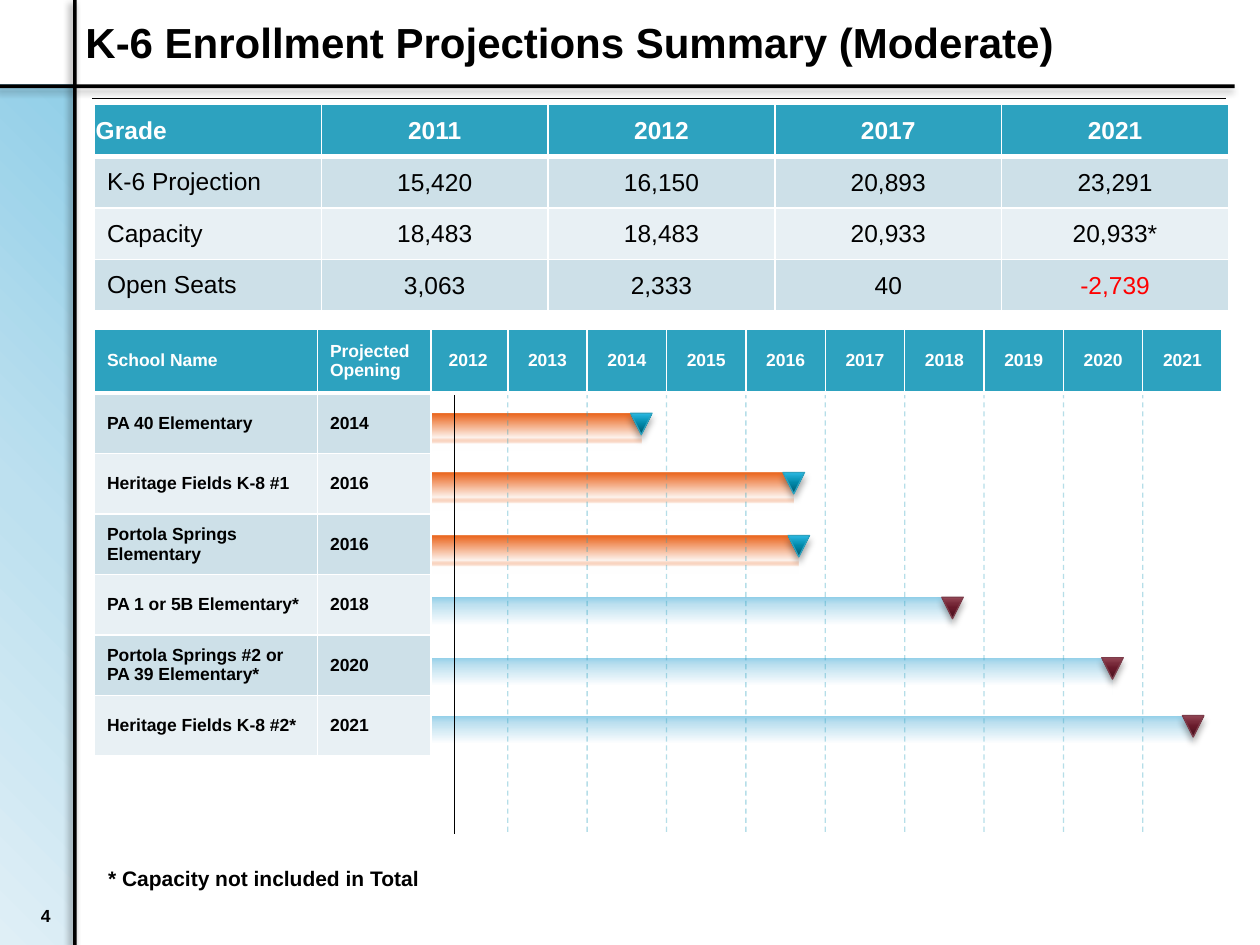
from lxml import etree
from pptx import Presentation
from pptx.dml.color import RGBColor
from pptx.enum import dml, shapes, text
from pptx.oxml import ns
from pptx.util import Inches, Pt

COLORS = {
    "black": "000000", "white": "FFFFFF", "red": "FF0000", "teal": "2DA2BF",
    "band_dark": "CDE0E8", "band_light": "E8F0F4", "maroon": "7D3C4A",
}
# Gradient stops: position, colour and optional opacity, all in percent
GRADIENTS = {
    "side": [(0, "92CFE8"), (50, "BDE0EF"), (100, "DFEFF6")],
    "orange": [(0, "EB641B"), (65, "EB641B", 7), (81, "FFFFFF"), (100, "FFFFFF")],
    "blue": [(0, "92CFE8"), (20, "BDE0EF"), (75, "FFFFFF")],
    "teal": [(0, "005367"), (50, "0086A7"), (70, "0E9ABE"), (100, "2CB9E3")],
    "maroon": [(0, "420F1A"), (50, "681A2B"), (70, "772939"), (100, "944755")],
}
ENROLLMENT = [
    ["Grade", "2011", "2012", "2017", "2021"],
    ["K-6 Projection", "15,420", "16,150", "20,893", "23,291"],
    ["Capacity", "18,483", "18,483", "20,933", "20,933*"],
    ["Open Seats", "3,063", "2,333", "40", "-2,739"],
]
# School, opening year, bar top, bar end, bar gradient, marker colour
SCHOOLS = [
    ("PA 40 Elementary", "2014", 3.28, 5.09, "orange", "teal"),
    ("Heritage Fields K-8 #1", "2016", 3.75, 6.3, "orange", "teal"),
    ("Portola Springs Elementary", "2016", 4.25, 6.34, "orange", "teal"),
    ("PA 1 or 5B Elementary*", "2018", 4.74, 7.56, "blue", "maroon"),
    ("Portola Springs #2 or PA 39 Elementary*", "2020", 5.22, 8.83, "blue", "maroon"),
    ("Heritage Fields K-8 #2*", "2021", 5.68, 9.47, "blue", "maroon"),
]
YEARS = [str(year) for year in range(2012, 2022)]
YEAR_LEFT, YEAR_WIDTH = 3.4, 0.63
TIMELINE_TOP, HEADER_HEIGHT = 2.61, 0.51
BAR_LEFT, MARKER = 3.28, 0.17


def rgb(name):
    return RGBColor.from_string(COLORS[name])


def child(parent, tag, **attrs):
    return etree.SubElement(parent, ns.qn(tag), {k: str(v) for k, v in attrs.items()})


def color_xml(parent, value, alpha=100):
    clr = child(parent, "a:srgbClr", val=value)
    if alpha < 100:
        child(clr, "a:alpha", val=alpha * 1000)


def set_gradient(s, name, angle=None):
    """Linear gradient at the angle, or a radial one from the top right corner."""
    s.fill.background()
    old = s._element.spPr.find(ns.qn("a:noFill"))
    grad = etree.Element(ns.qn("a:gradFill"), rotWithShape="1")
    stops = child(grad, "a:gsLst")
    for pos, *color in GRADIENTS[name]:
        color_xml(child(stops, "a:gs", pos=pos * 1000), *color)
    if angle is None:
        path = child(grad, "a:path", path="circle")
        child(path, "a:fillToRect", l=100000, b=100000)
    else:
        child(grad, "a:lin", ang=angle * 60000, scaled=0)
    old.getparent().replace(old, grad)


def set_shadow(s, alpha, angle):
    effects = s._element.spPr.find(ns.qn("a:effectLst"))
    shadow = child(effects, "a:outerShdw", blurRad=Pt(4), dist=Pt(3),
                   dir=angle * 60000, algn="ctr", rotWithShape=0)
    color_xml(shadow, COLORS["black"], alpha)


def add_shape(slide, box, fill=None, kind=shapes.MSO_SHAPE.RECTANGLE, line=None):
    s = slide.shapes.add_shape(kind, *map(Inches, box))
    s.shadow.inherit = False
    if fill:
        s.fill.solid()
        s.fill.fore_color.rgb = rgb(fill)
    if line:
        s.line.color.rgb = rgb(line)
        s.line.width = Pt(0.75)
    else:
        s.line.fill.background()
    return s


def add_line(slide, x1, y1, x2, y2, color="black", dashed=False):
    s = slide.shapes.add_connector(shapes.MSO_CONNECTOR.STRAIGHT,
                                   *map(Inches, (x1, y1, x2, y2)))
    s.line.color.rgb = rgb(color)
    s.line.width = Pt(0.75)
    if dashed:
        s.line.dash_style = dml.MSO_LINE.DASH
        clr = s._element.spPr.find(".//" + ns.qn("a:srgbClr"))
        child(clr, "a:alpha", val=35000)
    child(s._element.spPr, "a:effectLst")


def write(tf, content, size=10, color="black", bold=True, align=None):
    p = tf.paragraphs[0]
    p.alignment = align
    r = p.add_run()
    r.text = content
    r.font.name, r.font.size, r.font.bold = "Arial", Pt(size), bold
    r.font.color.rgb = rgb(color)


def add_text(slide, box, content, anchor=text.MSO_ANCHOR.TOP, **style):
    tf = slide.shapes.add_textbox(*map(Inches, box)).text_frame
    tf.word_wrap = True
    tf.vertical_anchor = anchor
    write(tf, content, **style)


def set_borders(cell, top, bottom):
    tc_pr = cell._tc.get_or_add_tcPr()
    for i, (side, width) in enumerate(zip("LRTB", (1, 1, top, bottom))):
        ln = etree.Element(ns.qn("a:ln" + side), w=str(Pt(width)))
        color_xml(child(ln, "a:solidFill"), COLORS["white"])
        tc_pr.insert(i, ln)


def add_table(slide, left, top, widths, heights, rows, size=10, bold_body=True,
              center_from=None, tight=False):
    """Banded table; columns from center_from on are centred, tight trims margins."""
    table = slide.shapes.add_table(len(rows), len(widths), Inches(left), Inches(top),
                                   Inches(sum(widths)), Inches(sum(heights))).table
    for col, width in zip(table.columns, widths):
        col.width = Inches(width)
    for i, (row, height) in enumerate(zip(rows, heights)):
        table.rows[i].height = Inches(height)
        for j, content in enumerate(row):
            cell = table.cell(i, j)
            header = i == 0
            centered = center_from is not None and j >= center_from
            cell.fill.solid()
            cell.fill.fore_color.rgb = rgb(
                "teal" if header else "band_dark" if i % 2 else "band_light")
            cell.vertical_anchor = text.MSO_ANCHOR.MIDDLE
            if tight and (header or centered):
                cell.margin_left = cell.margin_right = cell.margin_top = Inches(0.01)
                cell.margin_bottom = 0
            set_borders(cell, 3 if i == 1 else 1, 3 if header else 1)
            color = "white" if header else "red" if content.startswith("-") else "black"
            write(cell.text_frame, content, size=size, color=color,
                  bold=header or bold_body,
                  align=text.PP_ALIGN.CENTER if centered else None)


def add_frame(slide):
    set_gradient(add_shape(slide, (0, 0.67, 0.58, 6.83)), "side")
    for box in ((0.58, 0, 0.03, 7.5), (0, 0.67, 9.8, 0.03)):
        set_shadow(add_shape(slide, box, "black"), 40, 135)
    add_line(slide, 0.73, 0.78, 9.73, 0.78)
    add_text(slide, (0.58, 0, 8.07, 0.67), "K-6 Enrollment Projections Summary (Moderate)",
             anchor=text.MSO_ANCHOR.MIDDLE, size=24)
    add_text(slide, (0.1, 7, 0.4, 0.4), "4", anchor=text.MSO_ANCHOR.BOTTOM,
             align=text.PP_ALIGN.RIGHT)


def add_timeline(slide):
    for _, _, top, end, bar, _ in SCHOOLS:
        set_gradient(add_shape(slide, (BAR_LEFT, top, end - BAR_LEFT, 0.3)), bar, 90)
    for i in range(1, len(YEARS)):
        x = YEAR_LEFT + i * YEAR_WIDTH
        add_line(slide, x, 2.62, x, 6.62, "teal", dashed=True)
    add_line(slide, 3.61, 2.62, 3.61, 6.62)
    add_table(slide, YEAR_LEFT, TIMELINE_TOP, [YEAR_WIDTH] * len(YEARS),
              [HEADER_HEIGHT], [YEARS], center_from=0)
    add_table(slide, 0.75, TIMELINE_TOP, [1.77, 0.9],
              [HEADER_HEIGHT] + [0.48] * len(SCHOOLS),
              [("School Name", "Projected Opening")] + [row[:2] for row in SCHOOLS])
    for _, _, top, end, _, marker in SCHOOLS:
        s = add_shape(slide, (end - MARKER / 2, top, MARKER, MARKER),
                      kind=shapes.MSO_SHAPE.FLOWCHART_MERGE, line=marker)
        set_gradient(s, marker, 270)
        set_shadow(s, 35, 90)


def main():
    prs = Presentation()
    prs.slide_width, prs.slide_height = Inches(10), Inches(7.5)
    slide = prs.slides.add_slide(prs.slide_layouts[6])
    add_frame(slide)
    add_table(slide, 0.75, 0.83, [1.8] * 5, [0.41] * 4, ENROLLMENT, size=14,
              bold_body=False, center_from=1, tight=True)
    add_timeline(slide)
    add_text(slide, (0.76, 6.82, 5.67, 0.3), "* Capacity not included in Total", size=12)
    prs.save("out.pptx")


if __name__ == "__main__":
    main()
